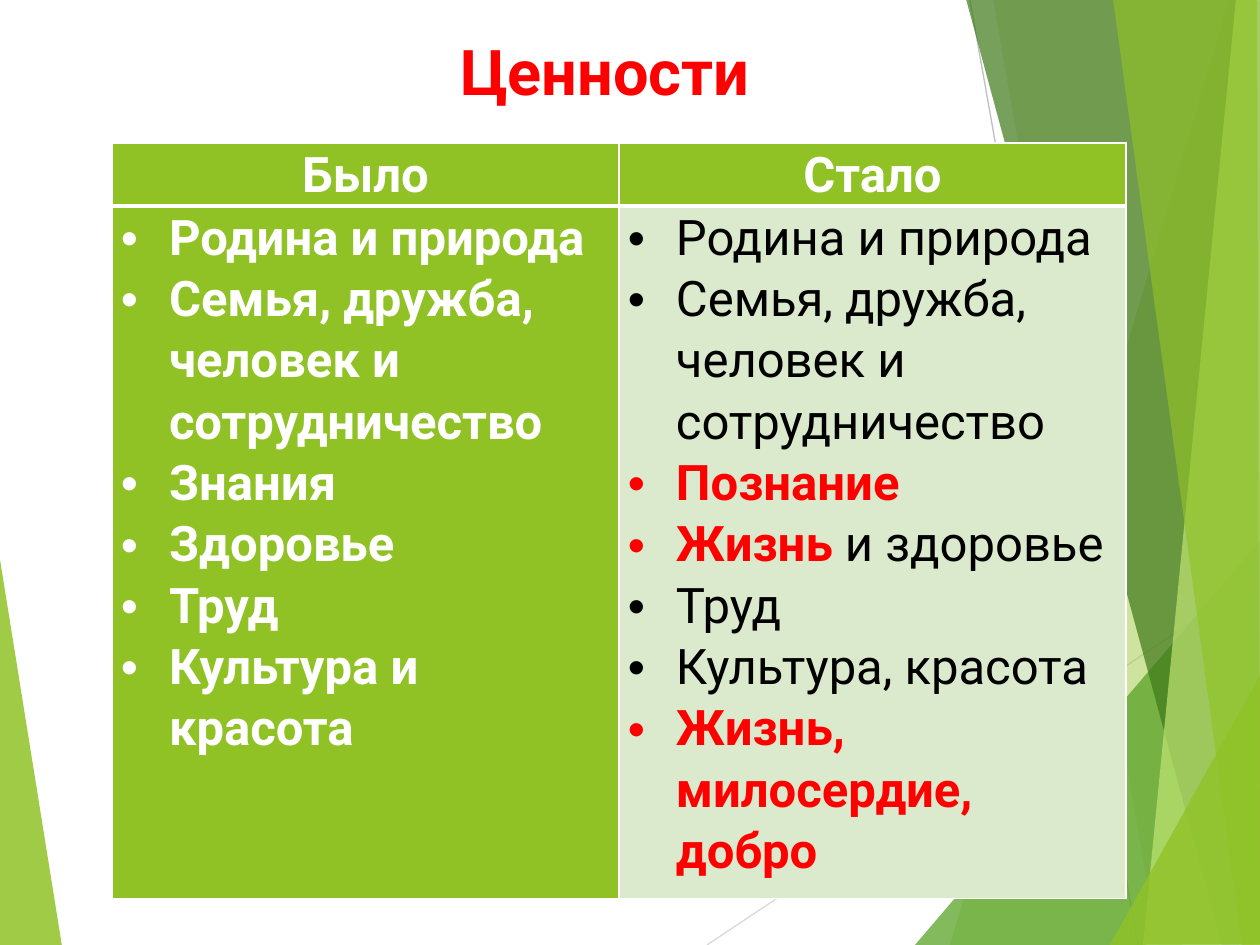
from lxml.etree import SubElement
from pptx import Presentation
from pptx.dml.color import RGBColor
from pptx.enum.shapes import MSO_CONNECTOR
from pptx.enum.text import MSO_ANCHOR, PP_ALIGN
from pptx.oxml.ns import qn
from pptx.util import Emu, Pt

PX = 914400 / 126
FONT = "Roboto"
COLORS = {
    "lime": "90C226", "green": "54A021", "forest": "3F7819", "pale": "C0E474",
    "mint": "DBE9CD", "red": "FF0000", "white": "FFFFFF", "black": "000000",
    "grey": "BFBFBF", "light grey": "D9D9D9",
}

# Content: each item is a list of (text, colour, bold) runs
TITLE = "Ценности"
HEADERS = ["Было", "Стало"]
BEFORE = [[(text, "white", True)] for text in (
    "Родина и природа", "Семья, дружба, человек и сотрудничество",
    "Знания", "Здоровье", "Труд", "Культура и красота")]
AFTER = [
    [("Родина и природа", "black", False)],
    [("Семья, дружба, человек и сотрудничество", "black", False)],
    [("Познание", "red", True)],
    [("Жизнь", "red", True), (" и здоровье", "black", False)],
    [("Труд", "black", False)],
    [("Культура, красота", "black", False)],
    [("Жизнь, милосердие, добро", "red", True)],
]

# Decoration: colour, opacity in percent, corners in px
LEFT_FACET = [("lime", 85, [(-1, 553), (62, 946), (-1, 945)])]
RAYS = [("light grey", (707, 945), (1261, 576)), ("grey", (970, 0), (1138, 945))]
RIGHT_FACETS = [
    ("lime", 30, [(1229, 0), (950, 945), (1262, 946), (1261, 1)]),
    ("lime", 20, [(993, -1), (1158, 945), (1261, 945), (1261, -1)]),
    ("green", 72, [(915, 945), (1260, 541), (1261, 945)]),
    ("forest", 70, [(966, -1), (1222, 945), (1261, 944), (1261, -1)]),
    ("pale", 70, [(1236, -1), (1143, 945), (1261, 945), (1260, -1)]),
    ("lime", 65, [(1113, -1), (1242, 945), (1260, 945), (1257, -1)]),
    ("lime", 80, [(1110, 945), (1261, 674), (1261, 944)]),
]


def px(n):
    return Emu(round(n * PX))


def rgb(name):
    return RGBColor.from_string(COLORS[name])


def add_run(p, text, size, color, bold):
    r = p.add_run()
    r.text = text
    r.font.name, r.font.size, r.font.bold = FONT, Pt(size), bold
    r.font.color.rgb = rgb(color)


def add_facets(s, facets):
    for color, opacity, points in facets:
        builder = s.shapes.build_freeform(*points[0], scale=PX)
        builder.add_line_segments(points[1:], close=True)
        sp = builder.convert_to_shape()
        sp.shadow.inherit = False
        sp.line.fill.background()
        sp.fill.solid()
        sp.fill.fore_color.rgb = rgb(color)
        clr = sp._element.spPr.find(qn("a:solidFill"))[0]
        SubElement(clr, qn("a:alpha"), val=str(opacity * 1000))


def add_rays(s):
    for color, start, end in RAYS:
        ray = s.shapes.add_connector(
            MSO_CONNECTOR.STRAIGHT, *map(px, start + end))
        ray.line.color.rgb = rgb(color)
        ray.line.width = Pt(0.75)
        SubElement(ray._element.spPr, qn("a:effectLst"))


def style_cell(cell, fill, top, bottom):
    tcPr = cell._tc.get_or_add_tcPr()
    for side, width in (("L", 1), ("R", 1), ("T", top), ("B", bottom)):
        ln = SubElement(tcPr, qn("a:ln" + side), w=str(Pt(width)))
        solid = SubElement(ln, qn("a:solidFill"))
        SubElement(solid, qn("a:srgbClr"), val=COLORS["white"])
    cell.fill.solid()
    cell.fill.fore_color.rgb = rgb(fill)
    cell.margin_left = cell.margin_right = px(9)
    cell.margin_top = cell.margin_bottom = 0


def add_items(tf, items):
    for i, runs in enumerate(items):
        p = tf.add_paragraph() if i else tf.paragraphs[0]
        p.line_spacing = 1.07
        pPr = p._p.get_or_add_pPr()
        pPr.set("marL", str(px(48)))
        pPr.set("indent", str(-px(48)))
        SubElement(pPr, qn("a:buFont"), typeface="Arial")
        SubElement(pPr, qn("a:buChar"), char="•")
        for text, color, bold in runs:
            add_run(p, text, 28, color, bold)


prs = Presentation()
prs.slide_width, prs.slide_height = px(1260), px(945)
s = prs.slides.add_slide(prs.slide_layouts[6])

# Background facets
add_facets(s, LEFT_FACET)
add_rays(s)
add_facets(s, RIGHT_FACETS)

# Title
tf = s.shapes.add_textbox(px(84), px(26), px(1042), px(117)).text_frame
tf.word_wrap = True
tf.vertical_anchor = MSO_ANCHOR.TOP
tf.paragraphs[0].alignment = PP_ALIGN.CENTER
add_run(tf.paragraphs[0], TITLE, 36, "red", True)

# Comparison table
table = s.shapes.add_table(2, 2, px(112), px(143), px(1014), px(736)).table
table.rows[0].height, table.rows[1].height = px(61), px(675)
for col, (header, items, fill) in enumerate(
        zip(HEADERS, (BEFORE, AFTER), ("lime", "mint"))):
    table.columns[col].width = px(507)
    head, body = table.cell(0, col), table.cell(1, col)
    style_cell(head, "lime", 1, 3)
    style_cell(body, fill, 3, 1)
    p = head.text_frame.paragraphs[0]
    p.alignment = PP_ALIGN.CENTER
    p.line_spacing = 1.07
    add_run(p, header, 28, "white", True)
    add_items(body.text_frame, items)

prs.save("out.pptx")
